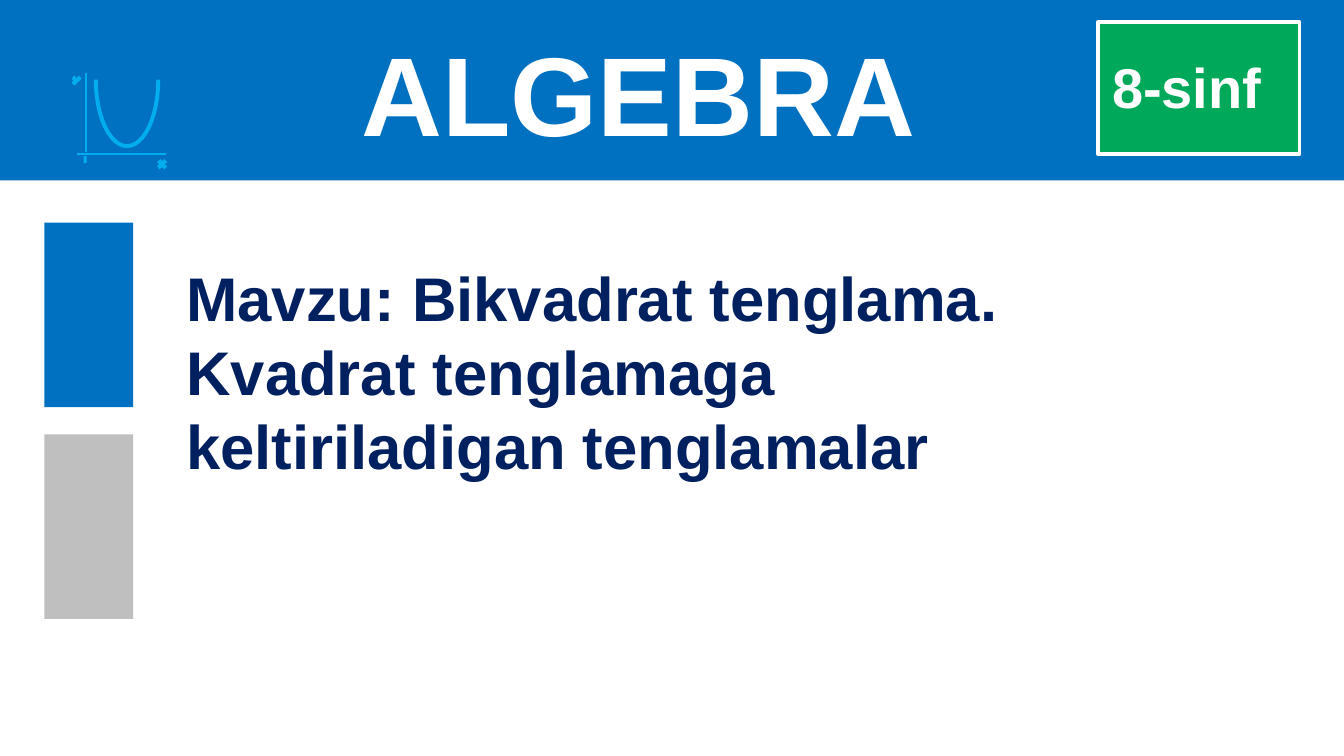
from math import cos, pi, sin

from lxml.etree import SubElement
from pptx import Presentation
from pptx.dml.color import RGBColor
from pptx.enum.shapes import MSO_CONNECTOR, MSO_SHAPE
from pptx.enum.text import MSO_ANCHOR, PP_ALIGN
from pptx.oxml.ns import qn
from pptx.util import Inches, Pt

BLUE = RGBColor(0x00, 0x70, 0xC0)
GREEN = RGBColor(0x00, 0xA8, 0x59)
CYAN = RGBColor(0x00, 0xAE, 0xEF)
NAVY = RGBColor(0x00, 0x20, 0x60)
GREY = RGBColor(0xBF, 0xBF, 0xBF)
WHITE = RGBColor(0xFF, 0xFF, 0xFF)
OFF_WHITE = RGBColor(0xFE, 0xFE, 0xFE)

# Outlines of the axis letters, in inches from their top left corner
LETTER_X = [(0.03, 0), (0, 0.03), (0.02, 0.05), (0, 0.07), (0.02, 0.1), (0.05, 0.08),
            (0.07, 0.1), (0.1, 0.07), (0.07, 0.05), (0.1, 0.03), (0.07, 0), (0.05, 0.02)]
LETTER_Y = [(0.03, 0), (0, 0.03), (0.02, 0.05), (0, 0.07), (0.03, 0.1),
            (0.1, 0.03), (0.07, 0), (0.05, 0.03)]


def paint(shape, fill=None, line=None, line_width=0):
    shape.shadow.inherit = False
    if fill is None:
        shape.fill.background()
    else:
        shape.fill.solid()
        shape.fill.fore_color.rgb = fill
    if line is None:
        shape.line.fill.background()
    else:
        shape.line.color.rgb = line
        shape.line.width = Pt(line_width)


def add_box(slide, left, top, width, height, **colours):
    shape = slide.shapes.add_shape(
        MSO_SHAPE.RECTANGLE, Inches(left), Inches(top), Inches(width), Inches(height))
    paint(shape, **colours)


def add_outline(slide, left, top, points, close, **colours):
    """Draw a freeform from points given in inches from (left, top)."""
    corners = [(Inches(left + x), Inches(top + y)) for x, y in points]
    builder = slide.shapes.build_freeform(*corners[0])
    builder.add_line_segments(corners[1:], close=close)
    paint(builder.convert_to_shape(), **colours)


def add_axis(slide, *ends):
    axis = slide.shapes.add_connector(MSO_CONNECTOR.STRAIGHT, *map(Inches, ends))
    axis.line.color.rgb = CYAN
    axis.line.width = Pt(1.23)
    SubElement(axis.element.spPr, qn("a:effectLst"))


def add_text(slide, left, top, width, height, lines, size, colour,
             margins=(0.1, 0.05, 0.1, 0.05), align=PP_ALIGN.LEFT,
             anchor=MSO_ANCHOR.TOP, space_before=0):
    frame = slide.shapes.add_textbox(
        Inches(left), Inches(top), Inches(width), Inches(height)).text_frame
    frame.word_wrap = True
    frame.vertical_anchor = anchor
    (frame.margin_left, frame.margin_top,
     frame.margin_right, frame.margin_bottom) = map(Inches, margins)
    for index, line in enumerate(lines):
        paragraph = frame.add_paragraph() if index else frame.paragraphs[0]
        paragraph.alignment = align
        paragraph.space_before = Pt(space_before)
        run = paragraph.add_run()
        run.text = line
        run.font.name = "Arial"
        run.font.size = Pt(size)
        run.font.bold = True
        run.font.color.rgb = colour


def add_header(slide, left, top, width, height):
    add_box(slide, left, top, width, height, fill=BLUE)
    add_text(slide, left + 3.52, top + 0.22, 5.61, 1.37, ["ALGEBRA"], 80, WHITE,
             margins=(0.02, 0.02, 0, 0), align=PP_ALIGN.CENTER,
             anchor=MSO_ANCHOR.MIDDLE, space_before=1.5)


def add_grade_badge(slide, left, top, width, height):
    add_box(slide, left, top + 0.02, width, height, fill=GREEN)
    add_box(slide, left, top, width, height, line=OFF_WHITE, line_width=2.4)
    add_text(slide, left, top + 0.28, width, 0.7, ["8-sinf"], 40, OFF_WHITE,
             margins=(0.14, 0.02, 0, 0), space_before=1.7)


def add_parabola_icon(slide, left, top):
    add_box(slide, left + 0.12, top + 0.83, 0.03, 0.07, fill=CYAN)
    add_axis(slide, left + 0.05, top + 0.81, left + 0.94, top + 0.81)
    add_axis(slide, left + 0.14, top, left + 0.14, top + 0.79)
    steps = 24
    curve = [(-0.31 * cos(pi * step / steps), 0.66 * sin(pi * step / steps))
             for step in range(steps + 1)]
    add_outline(slide, left + 0.55, top + 0.07, curve, False, line=CYAN, line_width=2.8)
    add_outline(slide, left + 0.85, top + 0.86, LETTER_X, True, fill=CYAN)
    add_outline(slide, left, top + 0.03, LETTER_Y, True, fill=CYAN)


def add_topic(slide, left, top):
    for index, colour in enumerate((BLUE, GREY)):
        add_box(slide, left, top + index * 2.1, 0.88, 1.83, fill=colour)
    add_text(slide, left + 1.31, top + 0.32, 10.6, 2.32,
             ["Mavzu: Bikvadrat tenglama. Kvadrat tenglamaga",
              "keltiriladigan tenglamalar"], 44, NAVY)


def main():
    presentation = Presentation()
    presentation.slide_width = Inches(13.33)
    presentation.slide_height = Inches(7.5)
    slide = presentation.slides.add_slide(presentation.slide_layouts[6])
    add_header(slide, 0, -0.01, 13.37, 1.8)
    add_grade_badge(slide, 10.89, 0.22, 2, 1.31)
    add_topic(slide, 0.44, 2.21)
    add_parabola_icon(slide, 0.71, 0.72)
    presentation.save("out.pptx")


if __name__ == "__main__":
    main()
